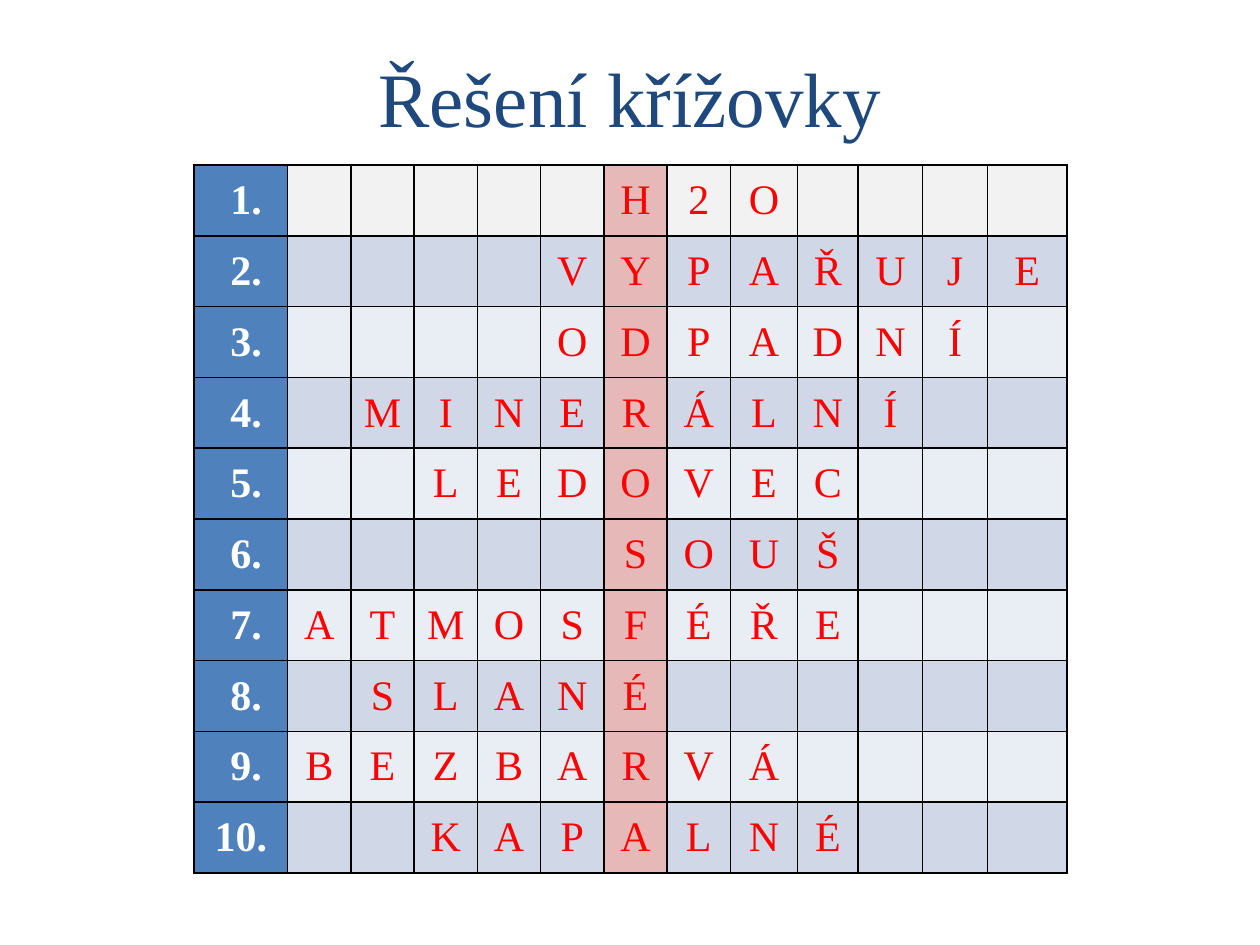
from dataclasses import dataclass

from lxml.etree import SubElement
from pptx import Presentation
from pptx.dml.color import RGBColor
from pptx.enum.text import MSO_ANCHOR, PP_ALIGN
from pptx.oxml.ns import qn
from pptx.util import Inches, Pt


@dataclass(frozen=True)
class Theme:
    """Colours and type sizes of the slide."""
    font: str = "Times New Roman"
    title_size: int = 44
    letter_size: int = 24
    border_width: int = 1
    title: str = "1F497D"
    number: str = "FFFFFF"
    number_fill: str = "4F81BD"
    letter: str = "FF0000"
    key_fill: str = "E6B9B8"
    first_fill: str = "F2F2F2"
    odd_fill: str = "E9EDF4"
    even_fill: str = "D0D8E8"
    border: str = "000000"


THEME = Theme()
ANSWERS = [
    ("H2O", 6), ("VYPAŘUJE", 5), ("ODPADNÍ", 5), ("MINERÁLNÍ", 2), ("LEDOVEC", 3),
    ("SOUŠ", 6), ("ATMOSFÉŘE", 1), ("SLANÉ", 2), ("BEZBARVÁ", 1), ("KAPALNÉ", 3),
]
KEY_COLUMN = 6
COLUMN_WEIGHTS = [0.74] + [0.5] * 7 + [0.53, 0.48, 0.51, 0.51, 0.63]


def write_text(frame, text, *, size, color, bold=False):
    """Write one centred paragraph into a text frame."""
    para = frame.paragraphs[0]
    para.alignment = PP_ALIGN.CENTER
    span = para.add_run()
    span.text = text
    span.font.name = THEME.font
    span.font.size = Pt(size)
    span.font.bold = bold
    span.font.color.rgb = RGBColor.from_string(color)


def draw_borders(cell):
    """Outline all four sides of a table cell."""
    properties = cell._tc.get_or_add_tcPr()
    for side in ("a:lnL", "a:lnR", "a:lnT", "a:lnB"):
        line = SubElement(properties, qn(side), w=str(Pt(THEME.border_width)))
        fill = SubElement(line, qn("a:solidFill"))
        SubElement(fill, qn("a:srgbClr"), val=THEME.border)


def format_cell(cell, text, *, fill, color, bold=False):
    """Give a crossword cell its border, fill and optional text."""
    draw_borders(cell)
    cell.fill.solid()
    cell.fill.fore_color.rgb = RGBColor.from_string(fill)
    cell.vertical_anchor = MSO_ANCHOR.MIDDLE
    cell.margin_left = cell.margin_right = Inches(0.07)
    cell.margin_top = cell.margin_bottom = 0
    if text:
        write_text(cell.text_frame, text, size=THEME.letter_size, color=color, bold=bold)


def place_title(page, box, text):
    """Move and format the title placeholder."""
    title = page.shapes.title
    title.left, title.top, title.width, title.height = box
    title.text_frame.vertical_anchor = MSO_ANCHOR.MIDDLE
    write_text(title.text_frame, text, size=THEME.title_size, color=THEME.title)


def row_fill(number):
    """Return the background colour of a numbered row."""
    if number == 1:
        return THEME.first_fill
    return THEME.odd_fill if number % 2 else THEME.even_fill


def place_crossword(page, box):
    """Build the solved crossword as a table filling the box."""
    width, height = box[2:]
    table = page.shapes.add_table(len(ANSWERS), len(COLUMN_WEIGHTS), *box).table
    table.first_row = table.horz_banding = False
    for column, weight in zip(table.columns, COLUMN_WEIGHTS):
        column.width = round(width * weight / sum(COLUMN_WEIGHTS))
    for number, (row, (answer, start)) in enumerate(zip(table.rows, ANSWERS), 1):
        row.height = round(height / len(ANSWERS))
        letters = dict(enumerate(answer, start))
        number_cell, *letter_cells = row.cells
        format_cell(number_cell, f"{number:>2}.", fill=THEME.number_fill,
                    color=THEME.number, bold=True)
        for position, cell in enumerate(letter_cells, 1):
            fill = THEME.key_fill if position == KEY_COLUMN else row_fill(number)
            format_cell(cell, letters.get(position), fill=fill, color=THEME.letter)


def main():
    """Create and save the crossword solution slide."""
    deck = Presentation()
    deck.slide_width, deck.slide_height = Inches(10), Inches(7.5)
    page = deck.slides.add_slide(deck.slide_layouts[5])
    place_title(page, (Inches(0.5), Inches(0.3), Inches(9), Inches(0.93)), "Řešení křížovky")
    place_crossword(page, (Inches(1.54), Inches(1.31), Inches(6.93), Inches(5.62)))
    deck.save("out.pptx")


if __name__ == "__main__":
    main()
